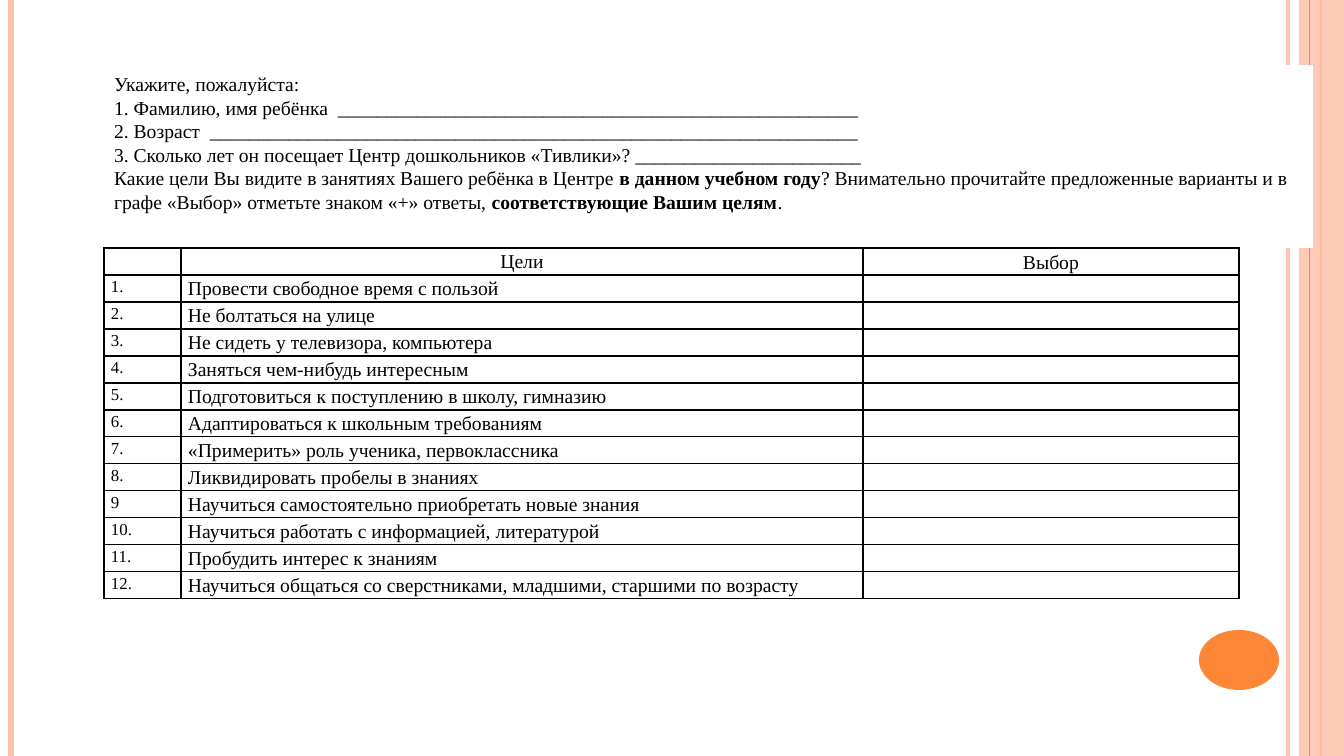
from lxml import etree
from pptx import Presentation, util as u
from pptx.dml.color import RGBColor
from pptx.enum import shapes, text
from pptx.oxml.ns import qn

PX = 9071.43
THEME = {
    "font": "Times New Roman", "ink": "000000", "paper": "FFFFFF",
    "peach": "FEC3AE", "orange": "FE8637",
    "body": 14, "number": 12, "border": 1,
}


def px(length):
    return u.Emu(round(length * PX))


def style(span, size, bold=False):
    span.font.name = THEME["font"]
    span.font.size = u.Pt(size)
    span.font.bold = bold
    span.font.color.rgb = RGBColor.from_string(THEME["ink"])


deck = Presentation()
deck.slide_width, deck.slide_height = px(1344), px(756)
page = deck.slides.add_slide(deck.slide_layouts[6])

stripes = [
    (1288, "peach", 3, 93),
    (11, "peach", 4.5, 100),
    (1321, "orange", 1.5, 100),
    (1310, "orange", 0.75, 100),
]
band = (1299, 0, 45, 756)
badge = (1199, 630, 80, 60)
intro = (104, 65, 1209, 183)

band_shape = None
for x, color, weight, opacity in stripes:
    if x == 1310:
        band_shape = page.shapes.add_shape(shapes.MSO_SHAPE.RECTANGLE, *map(px, band))
    stripe = page.shapes.add_connector(
        shapes.MSO_CONNECTOR.STRAIGHT, px(x), px(0), px(x), px(756))
    stripe.line.color.rgb = RGBColor.from_string(THEME[color])
    stripe.line.width = u.Pt(weight)
    if opacity < 100:
        tint = stripe.line._ln.find(".//" + qn("a:srgbClr"))
        etree.SubElement(tint, qn("a:alpha"), val=str(opacity * 1000))
    etree.SubElement(stripe._element.spPr, qn("a:effectLst"))

badge_shape = page.shapes.add_shape(shapes.MSO_SHAPE.OVAL, *map(px, badge))
panel = page.shapes.add_shape(shapes.MSO_SHAPE.RECTANGLE, *map(px, intro))
for shape, color in ((band_shape, "peach"), (badge_shape, "orange"), (panel, "paper")):
    shape.shadow.inherit = False
    shape.fill.solid()
    shape.fill.fore_color.rgb = RGBColor.from_string(THEME[color])
    shape.line.fill.background()
band_tint = band_shape._element.spPr.find(".//" + qn("a:srgbClr"))
etree.SubElement(band_tint, qn("a:alpha"), val="87000")

questions = [
    [("Укажите, пожалуйста:", False)],
    [("1. Фамилию, имя ребёнка  " + "_" * 53, False)],
    [("2. Возраст  " + "_" * 66, False)],
    [("3. Сколько лет он посещает Центр дошкольников «Тивлики»? " + "_" * 23, False)],
    [("Какие цели Вы видите в занятиях Вашего ребёнка в Центре ", False),
     ("в данном учебном году", True),
     ("? Внимательно прочитайте предложенные варианты и в графе «Выбор» "
      "отметьте знаком «+» ответы, ", False),
     ("соответствующие Вашим целям", True),
     (".", False)],
]
frame = panel.text_frame
frame.word_wrap = True
frame.vertical_anchor = text.MSO_ANCHOR.TOP
frame.margin_left = frame.margin_right = px(10)
frame.margin_top = px(7)
for index, parts in enumerate(questions):
    para = frame.paragraphs[0] if index == 0 else frame.add_paragraph()
    para.alignment = text.PP_ALIGN.LEFT
    for wording, bold in parts:
        span = para.add_run()
        span.text = wording
        style(span, THEME["body"], bold)

goals = [
    "Провести свободное время с пользой",
    "Не болтаться на улице",
    "Не сидеть у телевизора, компьютера",
    "Заняться чем-нибудь интересным",
    "Подготовиться к поступлению в школу, гимназию",
    "Адаптироваться к школьным требованиям",
    "«Примерить» роль ученика, первоклассника",
    "Ликвидировать пробелы в знаниях",
    "Научиться самостоятельно приобретать новые знания",
    "Научиться работать с информацией, литературой",
    "Пробудить интерес к знаниям",
    "Научиться общаться со сверстниками, младшими, старшими по возрасту",
]
rows = [("", "Цели", "Выбор")]
for number, goal in enumerate(goals, 1):
    rows.append(("9" if number == 9 else f"{number}.", goal, ""))

widths = [77, 682, 376]
row_height = 27
table = page.shapes.add_table(
    len(rows), len(widths), px(104), px(248),
    px(sum(widths)), px(row_height * len(rows))).table
table.first_row = table.horz_banding = False
for column, width in zip(table.columns, widths):
    column.width = px(width)

for r, row in enumerate(rows):
    table.rows[r].height = px(row_height)
    for c, wording in enumerate(row):
        cell = table.cell(r, c)
        cell.margin_left = cell.margin_right = px(7)
        cell.margin_top = cell.margin_bottom = 0
        if (r, c) == (0, 2):
            cell.vertical_anchor = text.MSO_ANCHOR.MIDDLE
        size = THEME["number"] if c == 0 else THEME["body"]
        para = cell.text_frame.paragraphs[0]
        para.alignment = text.PP_ALIGN.CENTER if r == 0 else text.PP_ALIGN.LEFT
        para.line_spacing = 1.15
        if wording:
            para.text = wording
            style(para.runs[0], size)
        else:
            etree.SubElement(para._p, qn("a:endParaRPr"), sz=str(THEME["number"] * 100))
        properties = cell._tc.get_or_add_tcPr()
        for side in ("lnL", "lnR", "lnT", "lnB"):
            edge = etree.SubElement(properties, qn("a:" + side),
                                    w=str(u.Pt(THEME["border"])))
            paint = etree.SubElement(edge, qn("a:solidFill"))
            etree.SubElement(paint, qn("a:srgbClr"), val=THEME["ink"])
        cell.fill.background()

deck.save("out.pptx")
